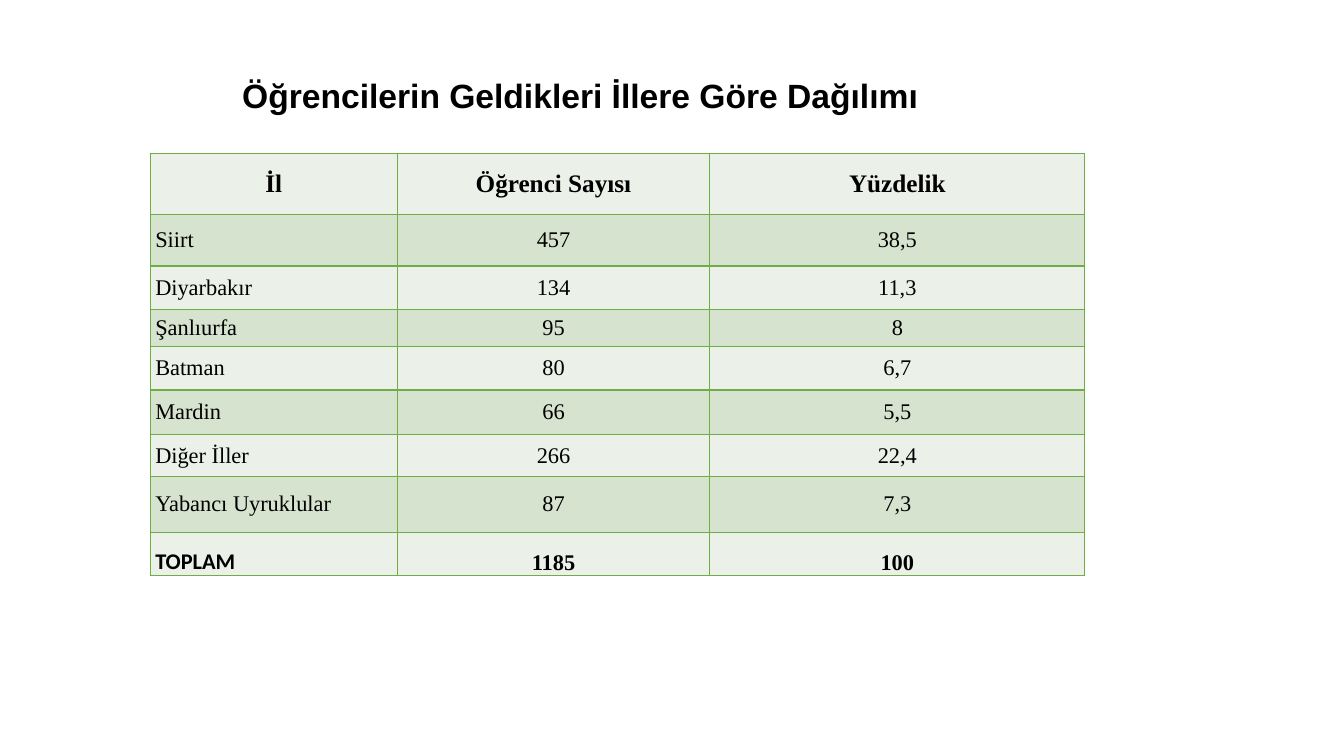
"""Build a slide with a table of students by home province."""
from lxml import etree
from pptx import Presentation
from pptx import util as u
from pptx.dml.color import RGBColor
from pptx.enum import text
from pptx.oxml.ns import qn

TITLE = "Öğrencilerin Geldikleri İllere Göre Dağılımı"
ROWS = [
    ("İl", "Öğrenci Sayısı", "Yüzdelik"),
    ("Siirt", "457", "38,5"),
    ("Diyarbakır", "134", "11,3"),
    ("Şanlıurfa", "95", "8"),
    ("Batman", "80", "6,7"),
    ("Mardin", "66", "5,5"),
    ("Diğer İller", "266", "22,4"),
    ("Yabancı Uyruklular", "87", "7,3"),
    ("TOPLAM", "1185", "100"),
]
COLUMN_WIDTHS = [2.45, 3.1, 3.72]
ROW_HEIGHTS = [0.61, 0.51, 0.43, 0.37, 0.43, 0.44, 0.42, 0.55, 0.43]
TITLE_BOX = (1.74, 0.69, 8.03, 0.5)
TABLE_LEFT, TABLE_TOP = 1.49, 1.52
BANDS = ("EBF1E9", "D5E3CF")
BORDER, INK = "70AD47", "000000"


def color(value):
    return RGBColor.from_string(value)


def format_paragraph(paragraph, font_name, size, bold, centred):
    paragraph.alignment = text.PP_ALIGN.CENTER if centred else text.PP_ALIGN.LEFT
    font = paragraph.font
    font.name, font.size, font.bold = font_name, u.Pt(size), bold
    font.color.rgb = color(INK)


def add_borders(cell):
    properties = cell._tc.get_or_add_tcPr()
    for side in ("lnL", "lnR", "lnT", "lnB"):
        line = etree.SubElement(properties, qn(f"a:{side}"), w=str(u.Pt(1)))
        fill = etree.SubElement(line, qn("a:solidFill"))
        etree.SubElement(fill, qn("a:srgbClr"), val=BORDER)


def add_title(slide):
    title = slide.shapes.title
    title.left, title.top, title.width, title.height = map(u.Inches, TITLE_BOX)
    frame = title.text_frame
    frame.text = TITLE
    frame.word_wrap = True
    frame.auto_size = text.MSO_AUTO_SIZE.SHAPE_TO_FIT_TEXT
    frame.vertical_anchor = text.MSO_ANCHOR.TOP
    format_paragraph(frame.paragraphs[0], "Arial", 24, True, True)


def add_province_table(slide):
    box = (TABLE_LEFT, TABLE_TOP, sum(COLUMN_WIDTHS), sum(ROW_HEIGHTS))
    table = slide.shapes.add_table(len(ROWS), len(COLUMN_WIDTHS), *map(u.Inches, box)).table
    for column, width in zip(table.columns, COLUMN_WIDTHS):
        column.width = u.Inches(width)
    last = len(ROWS) - 1
    for r, (values, height) in enumerate(zip(ROWS, ROW_HEIGHTS)):
        table.rows[r].height = u.Inches(height)
        for c, value in enumerate(values):
            cell = table.cell(r, c)
            cell.text = value
            cell.margin_left = cell.margin_right = u.Inches(0.05)
            cell.margin_top = cell.margin_bottom = 0
            cell.vertical_anchor = text.MSO_ANCHOR.BOTTOM if r == last else text.MSO_ANCHOR.MIDDLE
            add_borders(cell)
            cell.fill.solid()
            cell.fill.fore_color.rgb = color(BANDS[r % 2])
            font_name = "Calibri" if (r, c) == (last, 0) else "Times New Roman"
            format_paragraph(cell.text_frame.paragraphs[0], font_name,
                             18 if r == 0 else 16, r in (0, last), r == 0 or c > 0)


def main():
    presentation = Presentation()
    presentation.slide_width = u.Inches(13.33)
    presentation.slide_height = u.Inches(7.5)
    slide = presentation.slides.add_slide(presentation.slide_layouts[5])
    add_title(slide)
    add_province_table(slide)
    presentation.save("out.pptx")


if __name__ == "__main__":
    main()
